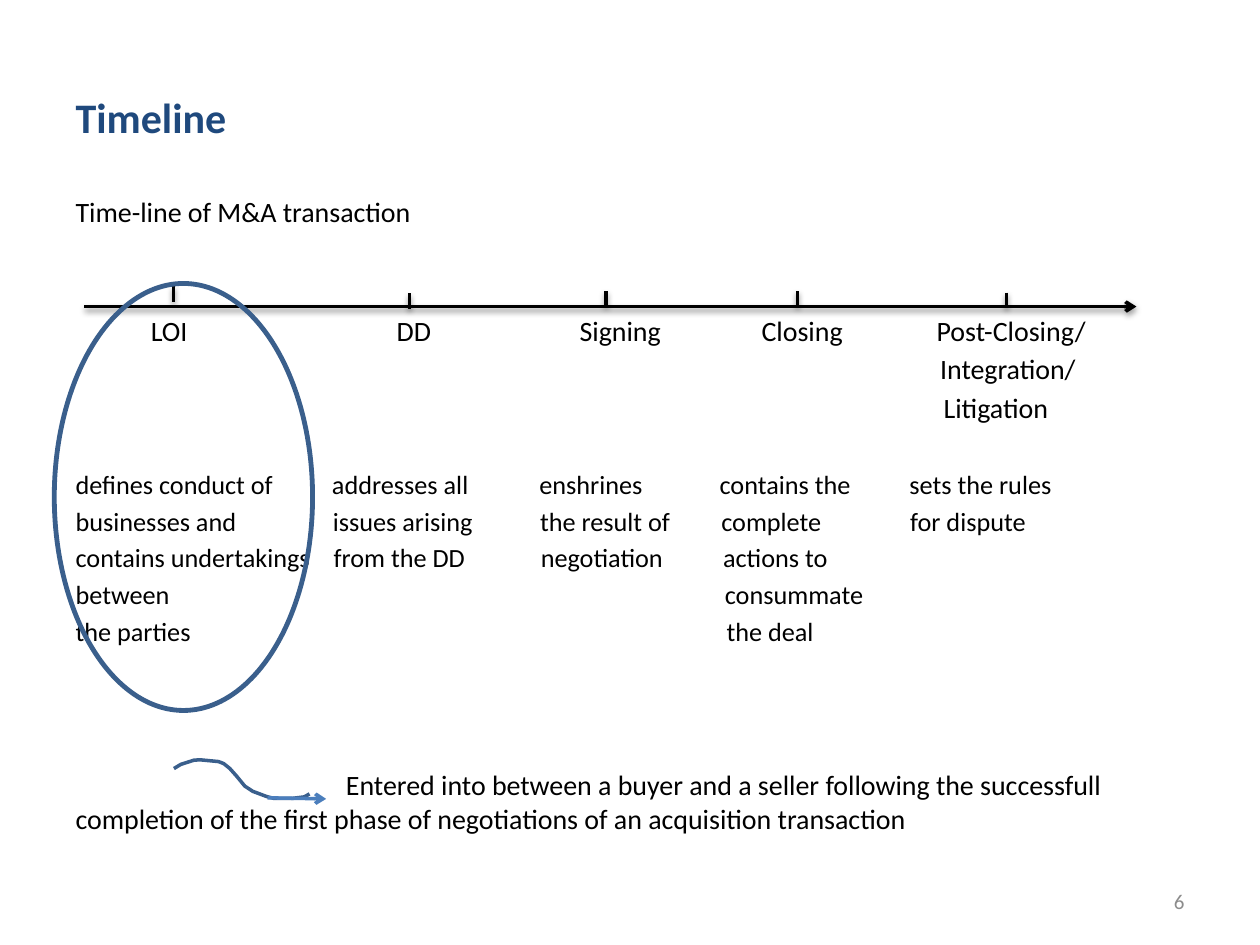
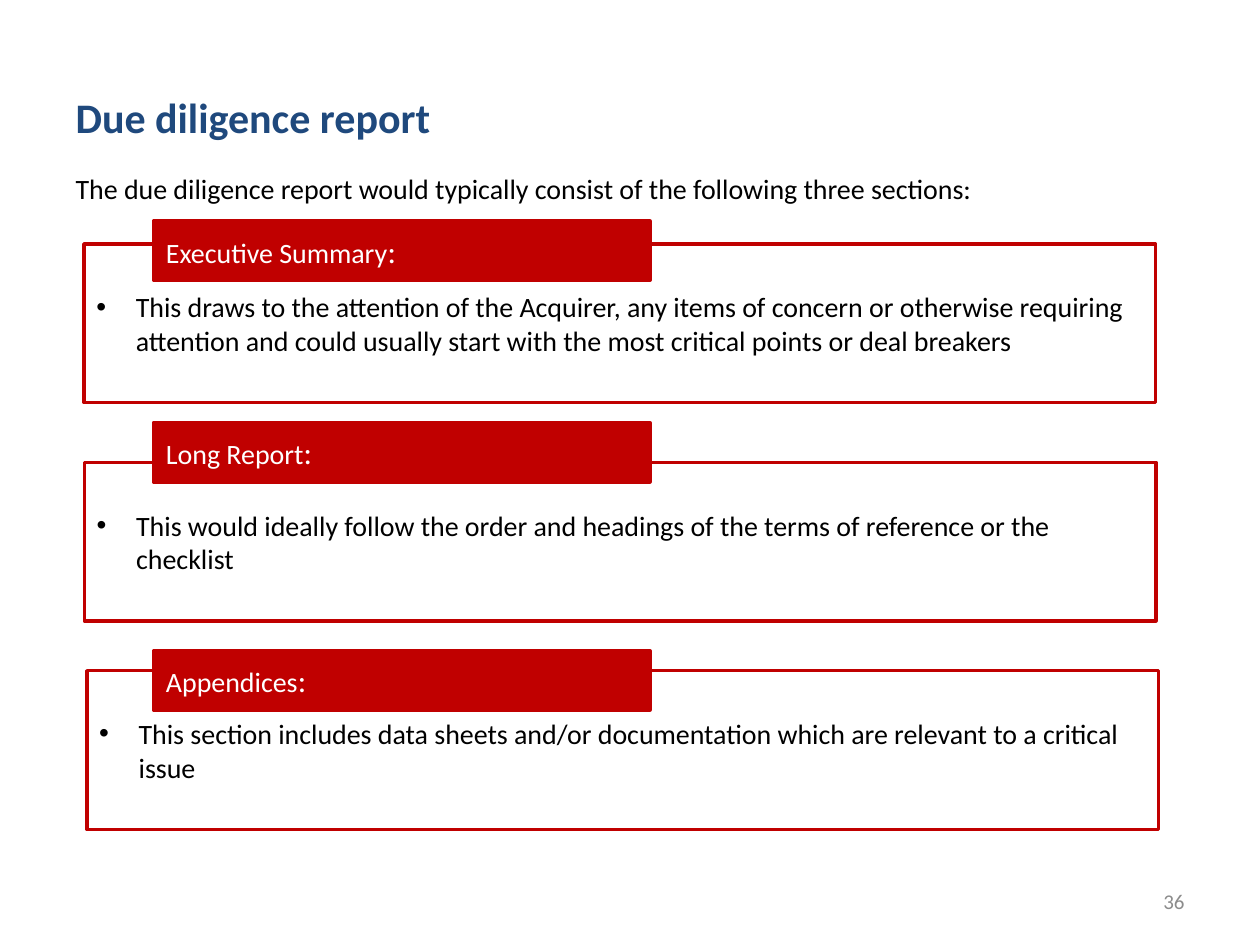
import pptx
import pptx.dml.color
import pptx.enum.shapes
import pptx.enum.text
import pptx.oxml
import pptx.oxml.ns
import pptx.util

Pt = pptx.util.Pt
RGBColor = pptx.dml.color.RGBColor
Align = pptx.enum.text.PP_ALIGN
Anchor = pptx.enum.text.MSO_ANCHOR
Preset = pptx.enum.shapes.MSO_SHAPE

NAVY = RGBColor(0x1F, 0x49, 0x7D)
STEEL = RGBColor(0x3A, 0x5F, 0x8C)
BLUE = RGBColor(0x4B, 0x7E, 0xBC)
RED = RGBColor(0xC0, 0x00, 0x00)
GREY = RGBColor(0x8C, 0x8C, 0x8C)
BLACK = RGBColor(0, 0, 0)
WHITE = RGBColor(0xFF, 0xFF, 0xFF)

FONT = "Calibri"
ROW_GAP = 2.9
TICKS = ((51, 11.5), (185.7, 7.5), (298, 8.7), (407.5, 8.7), (527, 8))
SWOOSH = ((0, 5), (4, 2.6), (11.5, 0.2), (15, 0), (25.5, 1), (28.5, 2.2),
          (32, 5), (36, 9.5), (40.5, 15), (45, 18), (53, 21), (57, 22),
          (68, 22), (74.5, 21.2), (77.5, 19.5))

STAGE_LABELS = (
    (43, 0, ("LOI",)),
    (183.5, 0, ("DD",)),
    (288, 0, ("Signing",)),
    (392, 0, ("Closing",)),
    (492, 2, ("Post-Closing/", "Integration/", "Litigation")),
)
STAGE_ROLES = (
    (0, 0, ("defines conduct of", "businesses and", "contains undertakings",
            "between", "the parties")),
    (146.5, 0.5, ("addresses all", "issues arising", "from the DD")),
    (265, 0.4, ("enshrines", "the result of", "negotiation")),
    (368, 1, ("contains the", "complete", "actions to", "consummate", "the deal")),
    (476.5, 0.4, ("sets the rules", "for dispute")),
)
SECTIONS = (
    ("Executive Summary", 48, 139.4, 126.4,
     "This draws to the attention of the Acquirer, any items of concern or otherwise "
     "requiring attention and could usually start with the most critical points or deal breakers"),
    ("Long Report", 48.2, 264.2, 241.6,
     "This would ideally follow the order and headings of the terms of reference or the checklist"),
    ("Appendices", 49.6, 383.3, 371.9,
     "This section includes data sheets and/or documentation which are relevant to a critical issue"),
)


def add_xml(parent, tag, content="", **attributes):
    pairs = " ".join(f'{key}="{value}"' for key, value in attributes.items())
    namespace = pptx.oxml.ns.nsdecls("a")
    parent.append(pptx.oxml.parse_xml(f"<a:{tag} {namespace} {pairs}>{content}</a:{tag}>"))


def add_run(paragraph, text, size, color=BLACK, bold=False):
    run = paragraph.add_run()
    run.text = text
    run.font.name = FONT
    run.font.size = Pt(size)
    run.font.bold = bold
    run.font.color.rgb = color


def set_indent(paragraph, margin, indent, bullet=None):
    properties = paragraph._p.get_or_add_pPr()
    properties.set("marL", str(Pt(margin)))
    properties.set("indent", str(Pt(indent)))
    if bullet:
        add_xml(properties, "buFont", typeface="Arial")
        add_xml(properties, "buChar", char=bullet)
    else:
        add_xml(properties, "buNone")


def add_text_line(frame, text, size=16, before=0.0, margin=0.0, indent=0.0):
    paragraph = frame.paragraphs[0] if not frame.text else frame.add_paragraph()
    set_indent(paragraph, margin, indent)
    paragraph.alignment = Align.LEFT
    paragraph.space_before = Pt(before)
    add_run(paragraph, text, size)
    return paragraph


def place(shape, left, top, width, height):
    shape.left, shape.top = Pt(left), Pt(top)
    shape.width, shape.height = Pt(width), Pt(height)


def start_slide(deck, heading, number, body_top):
    slide = deck.slides.add_slide(deck.slide_layouts[1])
    title = slide.shapes.title
    place(title, 36, 21.6, 648, 90)
    title.text_frame.auto_size = pptx.enum.text.MSO_AUTO_SIZE.NONE
    title.text_frame.vertical_anchor = Anchor.MIDDLE
    paragraph = title.text_frame.paragraphs[0]
    paragraph.alignment = Align.LEFT
    add_run(paragraph, heading, 24, NAVY, bold=True)

    body = slide.placeholders[1]
    place(body, 36, body_top, 648, 482.4 - body_top)
    body.text_frame.auto_size = pptx.enum.text.MSO_AUTO_SIZE.NONE

    footer = slide.shapes.add_textbox(Pt(516), Pt(500.5), Pt(168), Pt(28.8)).text_frame
    footer.word_wrap = True
    footer.vertical_anchor = Anchor.MIDDLE
    footer.paragraphs[0].alignment = Align.RIGHT
    add_run(footer.paragraphs[0], number, 12, GREY)
    return slide, body.text_frame


def add_line(slide, start, end, color, arrow=False, shadow=False):
    line = slide.shapes.add_connector(
        pptx.enum.shapes.MSO_CONNECTOR.STRAIGHT, *map(Pt, start + end))
    line.line.color.rgb = color
    line.line.width = Pt(2)
    if arrow:
        add_xml(line.line._get_or_add_ln(), "tailEnd", type="arrow")
    effect = ""
    if shadow:
        effect = (f'<a:outerShdw blurRad="{Pt(3.1)}" dist="{Pt(1.6)}" dir="5400000" rotWithShape="0">'
                  '<a:srgbClr val="000000"><a:alpha val="38000"/></a:srgbClr></a:outerShdw>')
    add_xml(line._element.spPr, "effectLst", effect)


def outline(shape, color, width, fill=None):
    shape.shadow.inherit = False
    shape.line.color.rgb = color
    shape.line.width = Pt(width)
    if fill is None:
        shape.fill.background()
    else:
        shape.fill.solid()
        shape.fill.fore_color.rgb = fill


def draw_axis(slide, left, top, width):
    add_line(slide, (left, top), (left + width, top), BLACK, arrow=True, shadow=True)
    for offset, rise in TICKS:
        x, y = left + offset, top - rise
        add_line(slide, (x, y), (x, y + 8.6), BLACK, shadow=True)


def write_columns(slide, columns, left, top, height, size):
    for offset, step, lines in columns:
        column = slide.shapes.add_textbox(Pt(left + offset), Pt(top), Pt(140), Pt(height))
        frame = column.text_frame
        frame.word_wrap = True
        frame.margin_left = frame.margin_right = frame.margin_top = frame.margin_bottom = 0
        for index, line in enumerate(lines):
            add_text_line(frame, line, size, ROW_GAP if index else 0, margin=index * step)


def draw_stage_highlight(slide, left, top, width, height):
    ring = slide.shapes.add_shape(Preset.OVAL, Pt(left), Pt(top), Pt(width), Pt(height))
    outline(ring, STEEL, 2.75)


def draw_swoosh(slide, left, top):
    points = [(Pt(left + x), Pt(top + y)) for x, y in SWOOSH]
    builder = slide.shapes.build_freeform(*points[0])
    builder.add_line_segments(points[1:], close=False)
    outline(builder.convert_to_shape(), STEEL, 2)
    add_line(slide, (left + 53.5, top + 21.7), (left + 87, top + 22.3), BLUE, arrow=True)


def build_timeline(deck):
    slide, frame = start_slide(deck, "Timeline", "6", 100.1)
    add_text_line(frame, "Time-line of M&A transaction").line_spacing = 1.4
    add_text_line(
        frame,
        "Entered into between a buyer and a seller following the successfull "
        "completion of the first phase of negotiations of an acquisition transaction",
        before=308, indent=154.5)
    write_columns(slide, STAGE_LABELS, 43.2, 179, 65, 16)
    write_columns(slide, STAGE_ROLES, 43.2, 267.8, 104, 15)
    draw_axis(slide, 48.2, 175.2, 601.2)
    draw_stage_highlight(slide, 31, 162, 147.6, 244)
    draw_swoosh(slide, 99.4, 434.2)


def add_panel(slide, left, top, width, height, fill):
    panel = slide.shapes.add_shape(Preset.RECTANGLE, Pt(left), Pt(top), Pt(width), Pt(height))
    outline(panel, RED, 2, fill)
    panel.text_frame.word_wrap = True
    panel.text_frame.vertical_anchor = Anchor.MIDDLE
    paragraph = panel.text_frame.paragraphs[0]
    paragraph.alignment = Align.LEFT
    return paragraph


def draw_section(slide, heading, left, top, tab_top, detail):
    content = add_panel(slide, left, top, 612.3, 90.7, WHITE)
    set_indent(content, 22.5, -22.5, bullet="•")
    add_run(content, detail, 16)
    label = add_panel(slide, 87.8, tab_top, 283.7, 33.8, RED)
    add_run(label, heading, 16, WHITE)
    add_run(label, ":", 18, WHITE)


def build_report(deck):
    slide, frame = start_slide(deck, "Due diligence report", "36", 94.3)
    add_text_line(
        frame, "The due diligence report would typically consist of the following three sections:")
    for section in SECTIONS:
        draw_section(slide, *section)


def main():
    deck = pptx.Presentation()
    deck.slide_width, deck.slide_height = Pt(720), Pt(540)
    build_timeline(deck)
    build_report(deck)
    deck.save("out.pptx")


if __name__ == "__main__":
    main()
